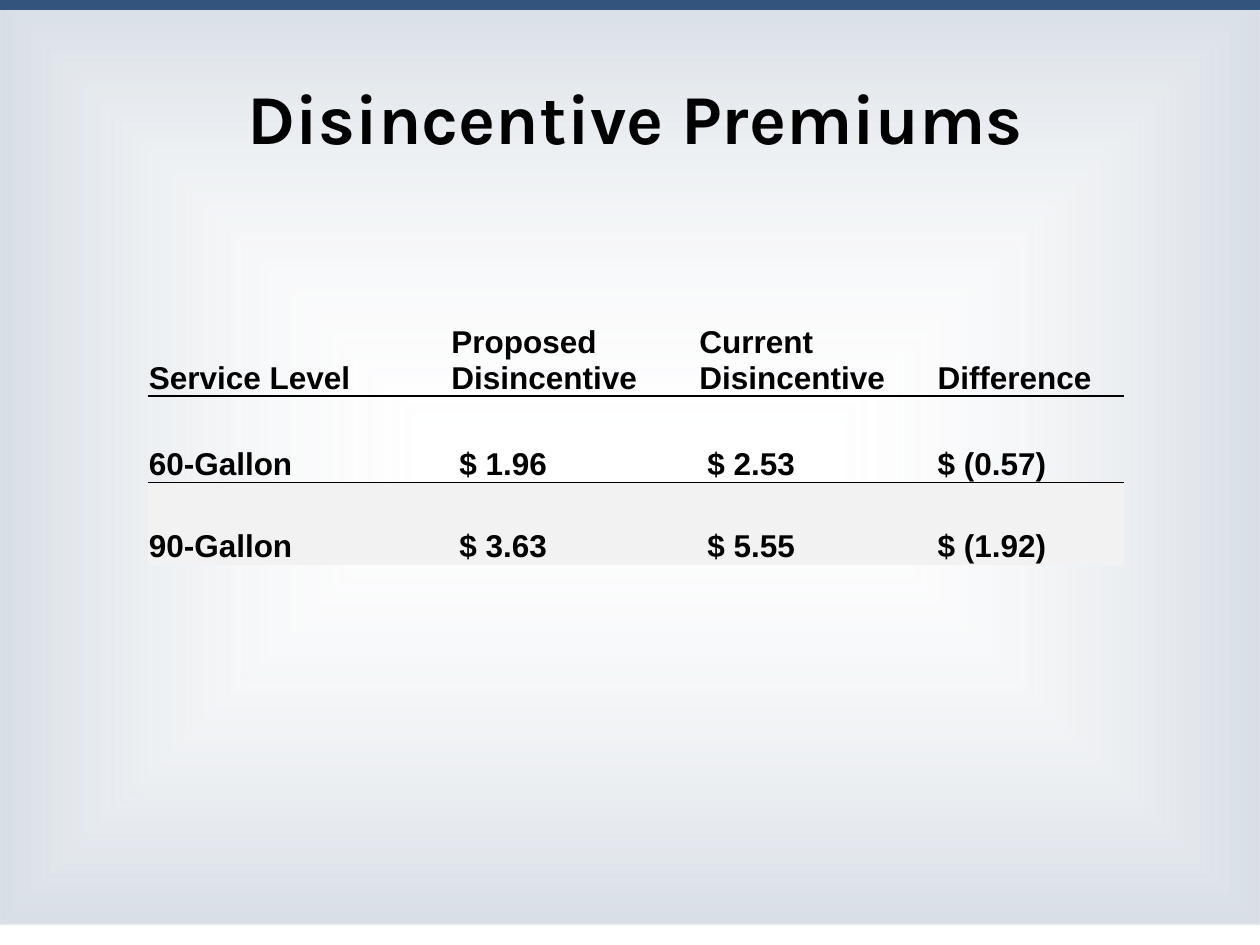
"""Build the Disincentive Premiums slide with its rate comparison table."""
from lxml import etree
from pptx import Presentation
from pptx import util as u
from pptx.dml.color import RGBColor
from pptx.enum import shapes, text
from pptx.oxml import parse_xml
from pptx.oxml.ns import nsdecls, qn

COLORS = {"ink": "000000", "white": "FFFFFF", "edge": "CCD5DE",
          "bar": "33557D", "band": "F2F2F2"}
TITLE = "Disincentive Premiums"
ROWS = [
    ("Service Level", "Proposed Disincentive", "Current Disincentive", "Difference"),
    ("60-Gallon", "$ 1.96", "$ 2.53", "$ (0.57)"),
    ("90-Gallon", "$ 3.63", "$ 5.55", "$ (1.92)"),
]
COLUMN_WIDTHS = (6.1, 5.0, 4.8, 3.78)
ROW_HEIGHTS = (2.49, 1.75, 1.65)
PLAIN_STYLE = "{2D5ABB26-0587-4C30-8999-92F81FD0307C}"


def color(name):
    return RGBColor.from_string(COLORS[name])


def set_font(paragraph, name, size):
    font = paragraph.font
    font.name, font.size, font.bold = name, u.Pt(size), True
    font.color.rgb = color("ink")


def add_panel(page, height):
    panel = page.shapes.add_shape(shapes.MSO_SHAPE.RECTANGLE, 0, 0, u.Cm(25.4), u.Cm(height))
    panel.shadow.inherit = False
    panel.line.fill.background()
    panel.fill.solid()
    panel.fill.fore_color.rgb = color("bar")
    return panel


def fade_to_edges(panel):
    stops = "".join(
        f'<a:gs pos="{position}"><a:srgbClr val="{COLORS[name]}">'
        f'<a:alpha val="{alpha}"/></a:srgbClr></a:gs>'
        for position, name, alpha in ((0, "white", 4000), (100000, "edge", 77000)))
    gradient = parse_xml(
        f'<a:gradFill {nsdecls("a")} rotWithShape="1"><a:gsLst>{stops}</a:gsLst>'
        '<a:path path="shape"><a:fillToRect l="50000" t="50000" r="50000" b="50000"/>'
        '</a:path></a:gradFill>')
    properties = panel._element.spPr
    properties.replace(properties.find(qn("a:solidFill")), gradient)


def add_border(cell, side):
    line = parse_xml(
        f'<a:{side} {nsdecls("a")} w="12700"><a:solidFill>'
        f'<a:srgbClr val="{COLORS["ink"]}"/></a:solidFill></a:{side}>')
    cell._tc.get_or_add_tcPr().insert(0, line)


def add_title(page):
    box = page.shapes.add_textbox(u.Cm(0.84), u.Cm(0.76), u.Cm(23.93), u.Cm(3.18))
    frame = box.text_frame
    frame.word_wrap = True
    frame.vertical_anchor = text.MSO_ANCHOR.MIDDLE
    para = frame.paragraphs[0]
    para.text = TITLE
    para.alignment = text.PP_ALIGN.CENTER
    set_font(para, "Karla", 40)


def fill_cell(cell, words, row, column):
    is_amount = row > 0 and column in (1, 2)
    cell.margin_left = cell.margin_right = u.Cm(0.18 if is_amount else 0.02)
    cell.margin_top = u.Cm(0 if is_amount else 0.02)
    cell.margin_bottom = 0
    cell.vertical_anchor = text.MSO_ANCHOR.BOTTOM
    para = cell.text_frame.paragraphs[0]
    para.text = words
    if is_amount:
        para.line_spacing = 1.07
    set_font(para, "Arial", 18)
    if row == 2:
        cell.fill.solid()
        cell.fill.fore_color.rgb = color("band")
    else:
        cell.fill.background()
        add_border(cell, "lnB" if row == 0 else "lnT")


def add_rates(page):
    frame = page.shapes.add_table(
        len(ROWS), len(COLUMN_WIDTHS), u.Cm(2.98), u.Cm(5.49),
        u.Cm(sum(COLUMN_WIDTHS)), u.Cm(sum(ROW_HEIGHTS)))
    table = frame.table
    table.first_row = table.horz_banding = False
    table._tbl.tblPr.find(qn("a:tableStyleId")).text = PLAIN_STYLE
    for column, width in zip(table.columns, COLUMN_WIDTHS):
        column.width = u.Cm(width)
    for row, height in zip(table.rows, ROW_HEIGHTS):
        row.height = u.Cm(height)
    for row, values in enumerate(ROWS):
        for column, words in enumerate(values):
            fill_cell(table.cell(row, column), words, row, column)


def main():
    deck = Presentation()
    deck.slide_width, deck.slide_height = u.Cm(25.4), u.Cm(19.05)
    page = deck.slides.add_slide(deck.slide_layouts[6])
    page.background.fill.solid()
    page.background.fill.fore_color.rgb = color("white")
    fade_to_edges(add_panel(page, 18.63))
    add_panel(page, 0.2)
    add_title(page)
    add_rates(page)
    deck.save("out.pptx")


if __name__ == "__main__":
    main()
